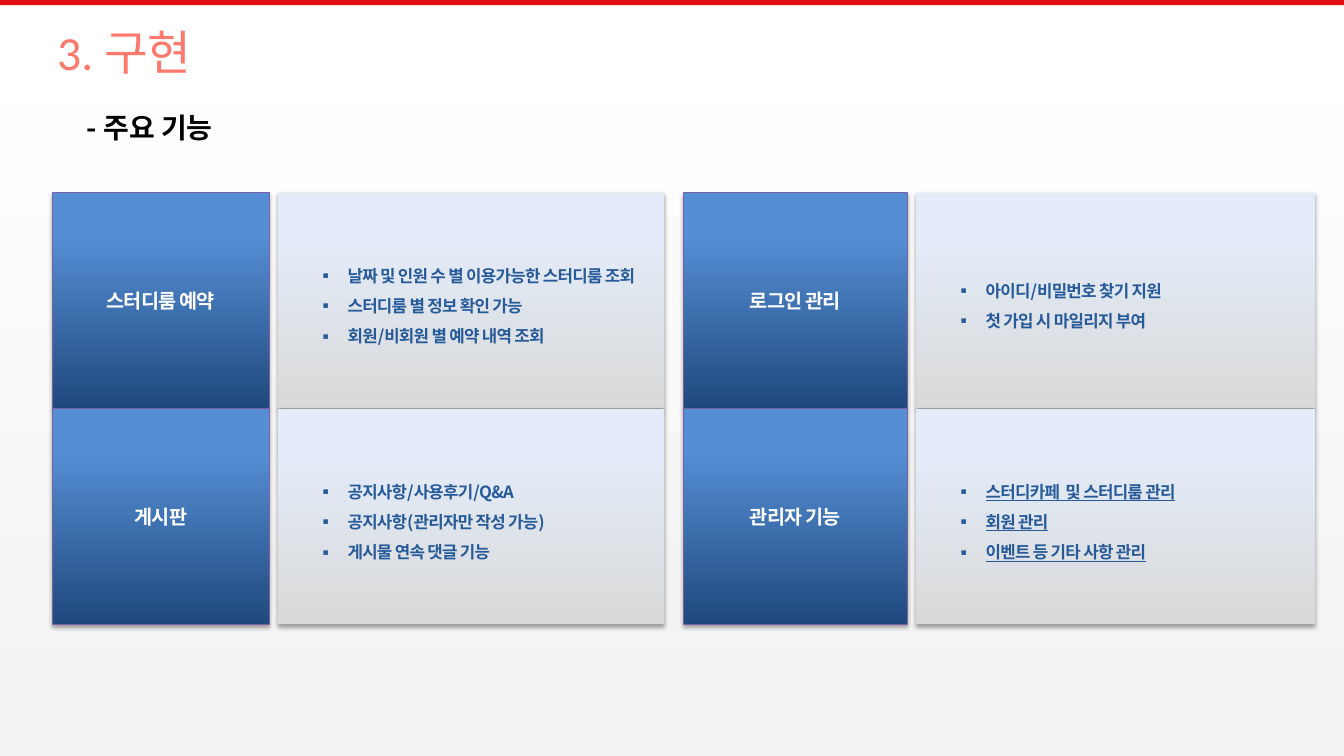
from pptx import Presentation
from pptx.dml.color import RGBColor
from pptx.enum import shapes, text
from pptx.oxml import parse_xml
from pptx.oxml.ns import qn
from pptx.util import Pt

# Content: label, features, underlined
TITLE = "3. 구현"
SUB = "- 주요 기능"
GRID = [
    [("스터디룸 예약", ["날짜 및 인원 수 별 이용가능한 스터디룸 조회",
                  "스터디룸 별 정보 확인 가능",
                  "회원/비회원 별 예약 내역 조회"], False),
     ("로그인 관리", ["아이디/비밀번호 찾기 지원",
                 "첫 가입 시 마일리지 부여"], False)],
    [("게시판", ["공지사항/사용후기/Q&A",
              "공지사항(관리자만 작성 가능)",
              "게시물 연속 댓글 기능"], False),
     ("관리자 기능", ["스터디카페  및 스터디룸 관리",
                 "회원 관리",
                 "이벤트 등 기타 사항 관리"], True)],
]

# Layout in points: left and width of label, left and width of list
COLS = [(37.4, 154.8, 198.7, 275.8), (488.2, 159.8, 654.5, 285.1)]
TOP, HIGH = 137.5, 154.3
WIDE, TALL = 960, 540

# Style
SANS = "Noto Sans CJK KR"
RED = RGBColor(0xE1, 0x0D, 0x10)
CORAL = RGBColor(0xFE, 0x78, 0x6B)
BLACK = RGBColor(0, 0, 0)
WHITE = RGBColor(0xFF, 0xFF, 0xFF)
PALE = RGBColor(0xF2, 0xF2, 0xF2)
NAVY = RGBColor(0x1F, 0x49, 0x7D)
BLUE = RGBColor(0x55, 0x8E, 0xD5)
GREY = RGBColor(0xD9, 0xD9, 0xD9)
ICE = RGBColor(0xE3, 0xEC, 0xF8)
PLUM = RGBColor(0x7D, 0x60, 0xA0)
INK = RGBColor(0x26, 0x5A, 0x99)
NS = 'xmlns:a="http://schemas.openxmlformats.org/drawingml/2006/main"'
SHADE = (f'<a:effectLst {NS}><a:outerShdw blurRad="{Pt(3.1)}" dist="{Pt(1.8)}" '
         'dir="5400000" rotWithShape="0"><a:srgbClr val="000000">'
         '<a:alpha val="35000"/></a:srgbClr></a:outerShdw></a:effectLst>')


def blend(fill, first, last, angle, end=1.0):
    fill.gradient()
    fill.gradient_angle = angle
    for stop, color, pos in zip(fill.gradient_stops, (first, last), (0, end)):
        stop.color.rgb = color
        stop.position = pos


def style(para, size, color, bold=True, face=SANS, space=0, under=False):
    for run in para.runs:
        font = run.font
        font.size, font.bold, font.name = Pt(size), bold, face
        font.color.rgb = color
        if under:
            font.underline = True
        props = run._r.get_or_add_rPr()
        if face == SANS:
            props.append(parse_xml(f'<a:ea {NS} typeface="{face}"/>'))
        if space:
            props.set("spc", str(space))


def rect(x, y, w, h):
    return slide.shapes.add_shape(shapes.MSO_SHAPE.RECTANGLE,
                                  Pt(x), Pt(y), Pt(w), Pt(h))


def panel(x, y, w, first, last, edge=None):
    box = rect(x, y, w, HIGH)
    blend(box.fill, first, last, 90, 0.8)
    if edge:
        box.line.color.rgb = edge
        box.line.width = Pt(0.75)
    else:
        box.line.fill.background()
    box._element.spPr.append(parse_xml(SHADE))
    frame = box.text_frame
    frame.word_wrap = True
    frame.vertical_anchor = text.MSO_ANCHOR.MIDDLE
    return frame


def bullet(para):
    para.alignment = text.PP_ALIGN.LEFT
    para.line_spacing = 1.5
    props = para._p.get_or_add_pPr()
    props.set("marL", str(Pt(42.5)))
    props.set("indent", str(Pt(-21.6)))
    props.append(parse_xml(f'<a:buFont {NS} typeface="{SANS}"/>'))
    props.append(parse_xml(f'<a:buChar {NS} char="▪"/>'))


def label(words, x, y, w, h, anchor, **look):
    frame = slide.shapes.add_textbox(Pt(x), Pt(y), Pt(w), Pt(h)).text_frame
    frame.word_wrap = True
    frame.vertical_anchor = anchor
    frame.text = words
    style(frame.paragraphs[0], **look)


deck = Presentation()
deck.slide_width, deck.slide_height = Pt(WIDE), Pt(TALL)
slide = deck.slides.add_slide(deck.slide_layouts[6])
blend(slide.background.fill, WHITE, PALE, 270)

# Top bar and headings
bar = rect(0, 0, WIDE, 3.6)
bar.shadow.inherit = False
bar.fill.solid()
bar.fill.fore_color.rgb = RED
bar.line.fill.background()
label(TITLE, 33.8, 14.4, 828, 44.6, text.MSO_ANCHOR.MIDDLE,
      size=34, color=CORAL, bold=False, face="Calibri")
label(SUB, 54.7, 75.6, 658.8, 31.7, text.MSO_ANCHOR.TOP,
      size=20, color=BLACK)

# Feature grid
for col, (left, width, side, span) in enumerate(COLS):
    for row, line in enumerate(GRID):
        name, items, under = line[col]
        y = TOP + row * HIGH
        head = panel(left, y, width, NAVY, BLUE, PLUM)
        head.text = name
        head.paragraphs[0].alignment = text.PP_ALIGN.CENTER
        style(head.paragraphs[0], 14, WHITE, space=-50)
        body = panel(side, y, span, GREY, ICE)
        body.text = "\n".join(items)
        for para in body.paragraphs:
            bullet(para)
            style(para, 12, INK, space=-50, under=under)

deck.save("out.pptx")
